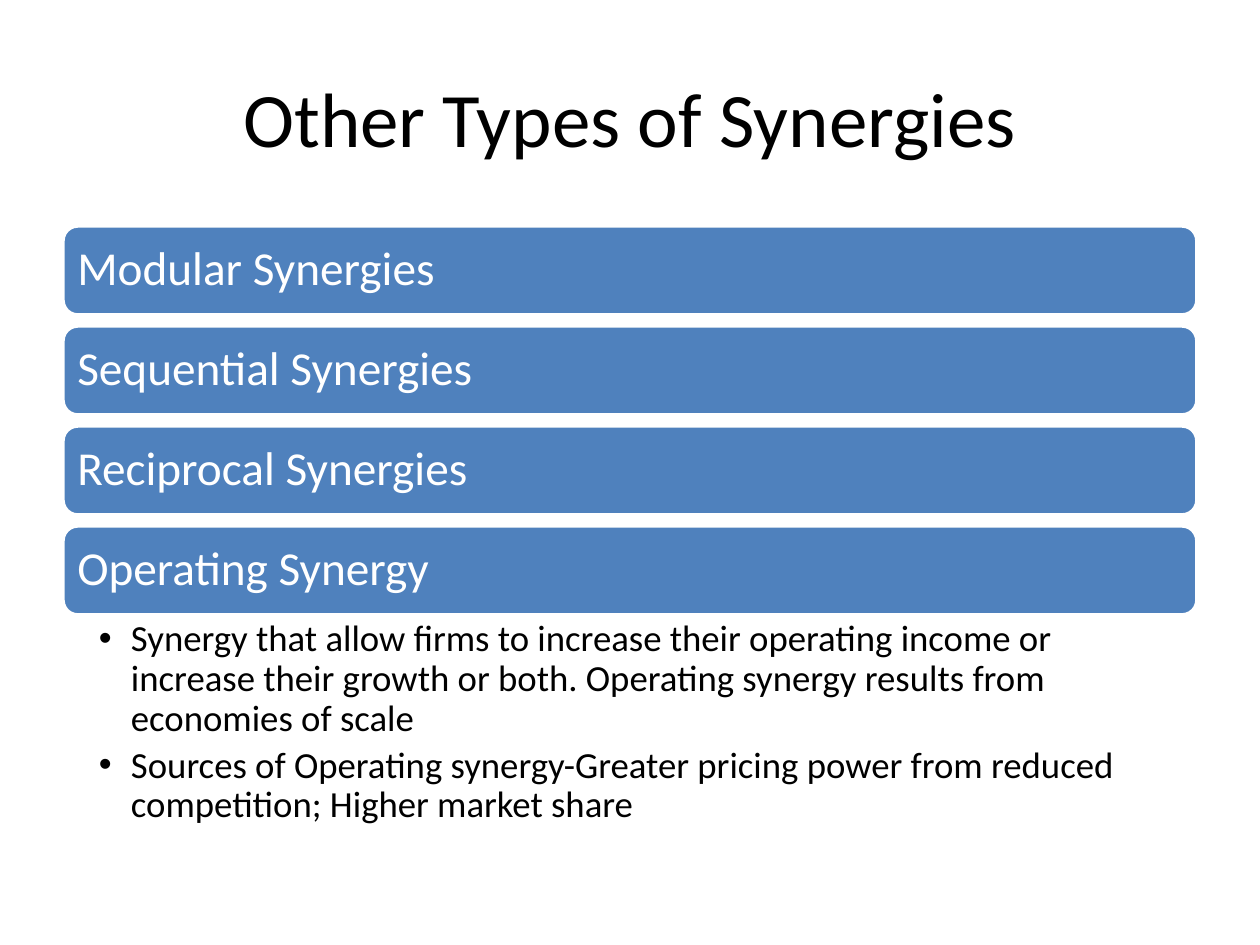
from dataclasses import dataclass

from lxml.etree import SubElement
from pptx import Presentation
from pptx.dml.color import RGBColor
from pptx.enum.shapes import MSO_SHAPE
from pptx.enum.text import MSO_ANCHOR, PP_ALIGN
from pptx.oxml.ns import qn
from pptx.util import Emu, Pt


@dataclass(frozen=True)
class Theme:
    font: str = "Calibri"
    ink: RGBColor = RGBColor(0, 0, 0)
    paper: RGBColor = RGBColor(255, 255, 255)
    accent: RGBColor = RGBColor(0x4F, 0x81, 0xBD)
    title_size: int = 44
    bar_size: int = 27
    bullet_size: int = 21


def px(length):
    return Emu(round(length * 914400 / 126))


class SlideBuilder:
    def __init__(self, slide, theme):
        self.slide = slide
        self.theme = theme

    def text_frame(self, shape, margins, anchor):
        frame = shape.text_frame
        frame.word_wrap = True
        frame.vertical_anchor = anchor
        frame.margin_left, frame.margin_top, frame.margin_right, frame.margin_bottom = map(px, margins)
        return frame

    def set_text(self, para, text, size, color, align=PP_ALIGN.LEFT, line_spacing=0.9):
        para.text = text
        para.alignment = align
        para.line_spacing = line_spacing
        para.font.name = self.theme.font
        para.font.size = Pt(size)
        para.font.color.rgb = color

    def title(self, text, *bounds):
        box = self.slide.shapes.add_textbox(*map(px, bounds))
        frame = self.text_frame(box, (13, 6, 13, 6), MSO_ANCHOR.MIDDLE)
        self.set_text(frame.paragraphs[0], text, self.theme.title_size, self.theme.ink, PP_ALIGN.CENTER, 1.0)

    def bar(self, text, *bounds):
        bar = self.slide.shapes.add_shape(MSO_SHAPE.ROUNDED_RECTANGLE, *map(px, bounds))
        bar.shadow.inherit = False
        bar.fill.solid()
        bar.fill.fore_color.rgb = self.theme.accent
        bar.line.color.rgb = self.theme.paper
        bar.line.width = Pt(2)
        frame = self.text_frame(bar, (10, 10, 10, 10), MSO_ANCHOR.MIDDLE)
        self.set_text(frame.paragraphs[0], text, self.theme.bar_size, self.theme.paper)

    def bullets(self, texts, *bounds):
        box = self.slide.shapes.add_textbox(*map(px, bounds))
        frame = self.text_frame(box, (36, 5, 26, 5), MSO_ANCHOR.TOP)
        for index, text in enumerate(texts):
            para = frame.add_paragraph() if index else frame.paragraphs[0]
            self.set_text(para, text, self.theme.bullet_size, self.theme.ink)
            para.level = 1
            para.space_before = Pt(4.2 if index else 0)
            properties = para._p.get_or_add_pPr()
            properties.set("marL", str(px(32)))
            properties.set("indent", str(-px(32)))
            default_run = properties.find(qn("a:defRPr"))
            default_run.addprevious(SubElement(properties, qn("a:buFont"), typeface="Arial"))
            default_run.addprevious(SubElement(properties, qn("a:buChar"), char="•"))


def main():
    deck = Presentation()
    deck.slide_width, deck.slide_height = px(1260), px(945)
    page = SlideBuilder(deck.slides.add_slide(deck.slide_layouts[6]), Theme())

    left, width = 63, 1134
    page.title("Other Types of Synergies", left, 38, width, 158)

    bar_top, bar_height, bar_pitch = 226, 89, 100
    synergies = ["Modular Synergies", "Sequential Synergies", "Reciprocal Synergies", "Operating Synergy"]
    for index, synergy in enumerate(synergies):
        page.bar(synergy, left, bar_top + index * bar_pitch, width, bar_height)

    bullets_top = bar_top + (len(synergies) - 1) * bar_pitch + bar_height
    page.bullets(
        [
            "Synergy that allow firms to increase their operating income or increase their growth or both. "
            "Operating synergy results from economies of scale",
            "Sources of Operating synergy-Greater pricing power from reduced competition; Higher market share",
        ],
        left, bullets_top, width, 223,
    )
    deck.save("out.pptx")


if __name__ == "__main__":
    main()
